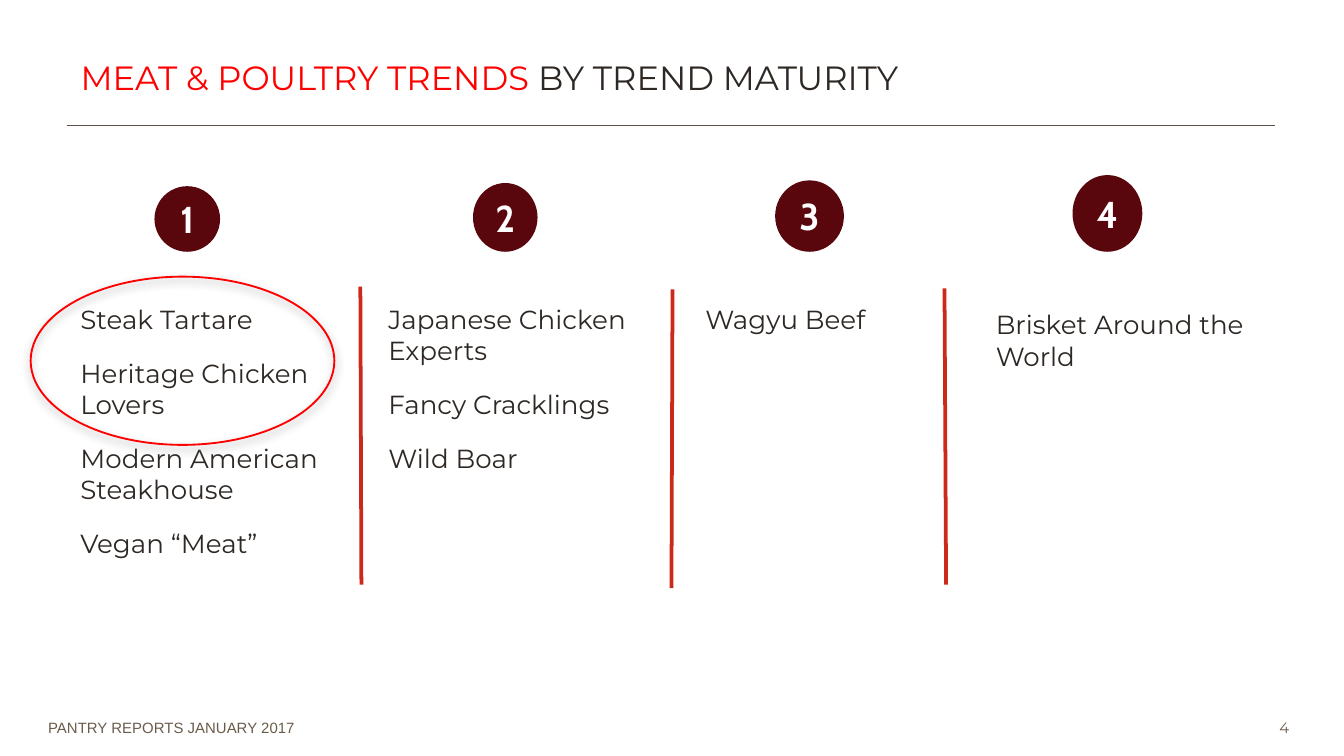
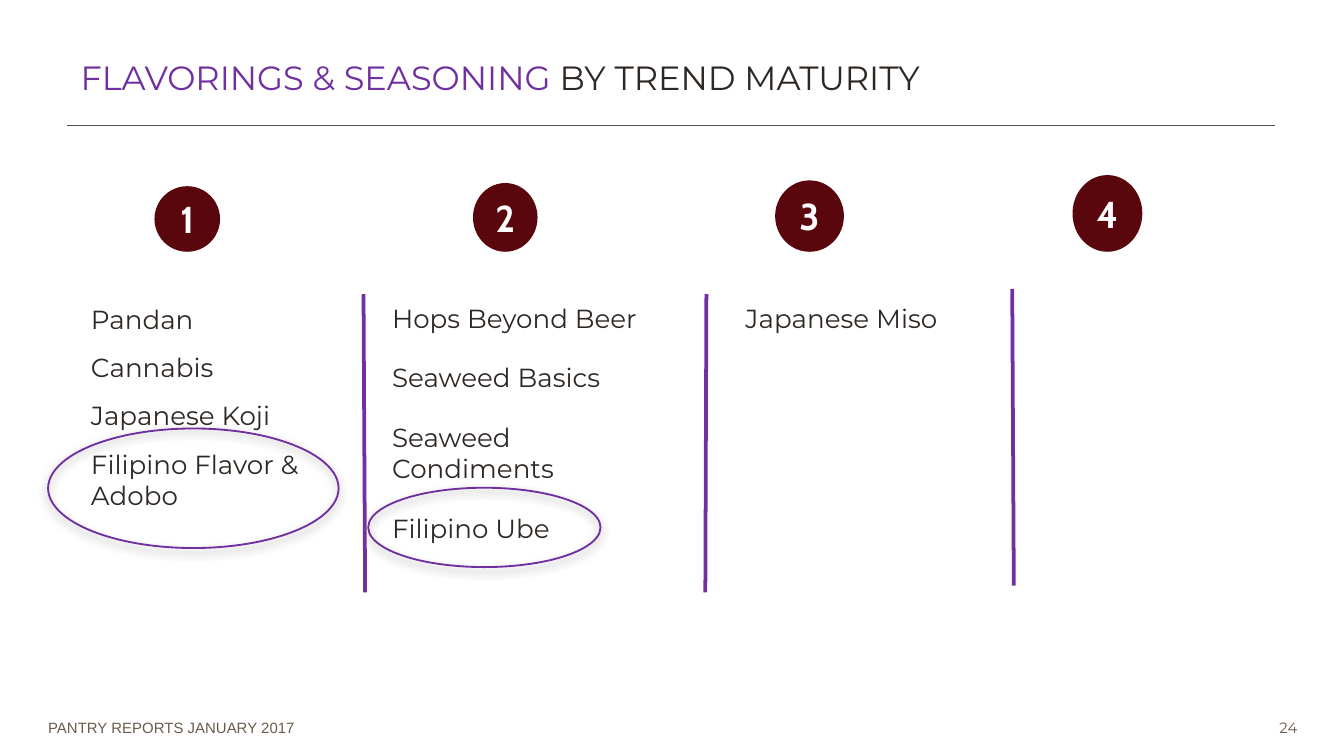
from lxml import etree
from pptx import Presentation
from pptx.dml.color import RGBColor
from pptx.enum import shapes, text
from pptx.oxml.ns import qn
from pptx.util import Cm, Pt

HUES = {
    "ink": "2E2824", "foot": "6A5C4B", "rule": "5C4F47", "badge": "5A060D",
    "white": "FFFFFF", "red": "FF0000", "brick": "CB2A1A",
    "violet": "7030A0", "shade": "808080",
}
BODY = {"name": "Montserrat", "size": Pt(14), "hue": "ink"}
HEAD = {**BODY, "size": Pt(18)}
MARK = {"name": "Cabin", "size": Pt(20), "bold": True, "hue": "white"}
FOOT = {"name": "Arial", "size": Pt(8), "hue": "foot"}
PAGE = {**FOOT, "name": "Montserrat"}

# Badge sizes and centres; all stand on the same base line
BADGES = [(3.54, 1.24, 1.24), (9.55, 1.22, 1.3),
          (15.3, 1.3, 1.35), (20.93, 1.32, 1.45)]

# Boxes are left, top, width, height in cm; bars are x1, y1, x2, y2
MEAT = {
    "title": "MEAT & POULTRY TRENDS ", "page": "4",
    "head": "red", "bar": "brick",
    "lists": [
        ((1.27, 5.61, 5.54, 8.26), 6, 6,
         ["Steak Tartare", "Heritage Chicken Lovers",
          "Modern American Steakhouse", "Vegan “Meat”"]),
        ((7.09, 5.61, 5.77, 4.22), 6, 6,
         ["Japanese Chicken Experts", "Fancy Cracklings", "Wild Boar"]),
        ((13.08, 5.61, 5, 4.52), 0, 6, ["Wagyu Beef"]),
        ((18.57, 5.71, 5.61, 6.17), 0, 6, ["Brisket Around the World"]),
    ],
    "bars": [(6.83, 11.05, 6.81, 5.42), (12.69, 11.12, 12.71, 5.47),
             (17.88, 11.05, 17.85, 5.45)],
    "rings": [(0.58, 5.23, 5.74, 3.18)],
}
SPICE = {
    "title": "FLAVORINGS & SEASONING ", "page": "24",
    "head": "violet", "bar": "violet",
    "lists": [
        ((1.47, 5.61, 5.33, 5.59), 9, 0,
         ["Pandan", "Cannabis", "Japanese Koji", "Filipino Flavor & Adobo"]),
        ((7.16, 5.59, 5.77, 6.27), 9, 6,
         ["Hops Beyond Beer", "Seaweed Basics",
          "Seaweed Condiments", "Filipino Ube"]),
        ((13.84, 5.59, 4.8, 6.17), 9, 6, ["Japanese Miso"]),
    ],
    "bars": [(6.9, 11.2, 6.87, 5.56), (13.33, 11.2, 13.35, 5.56),
             (19.16, 11.07, 19.13, 5.46)],
    "rings": [(0.91, 8.1, 5.49, 2.26), (6.96, 9.22, 4.39, 1.5)],
}


def tint(hue):
    return RGBColor.from_string(HUES[hue])


def span(box):
    return [Cm(side) for side in box]


def style(font, form):
    for key, val in form.items():
        if key == "hue":
            font.color.rgb = tint(val)
        else:
            setattr(font, key, val)


def add_run(para, words, form):
    run = para.add_run()
    run.text = words
    style(run.font, form)


def add_text(slide, box, lines, form, wrap=True, **gaps):
    frame = slide.shapes.add_textbox(*span(box)).text_frame
    frame.word_wrap = wrap
    for num, line in enumerate(lines):
        para = frame.add_paragraph() if num else frame.paragraphs[0]
        for key, val in gaps.items():
            setattr(para, key, val)
        add_run(para, line, form)


def add_line(slide, ends, hue, width):
    line = slide.shapes.add_connector(
        shapes.MSO_CONNECTOR.STRAIGHT, *span(ends))
    line.line.color.rgb = tint(hue)
    line.line.width = Pt(width)
    etree.SubElement(line._element.spPr, qn("a:effectLst"))


def add_oval(slide, box):
    oval = slide.shapes.add_shape(shapes.MSO_SHAPE.OVAL, *span(box))
    oval.shadow.inherit = False
    return oval


def add_title(slide, box, words, hue):
    title = slide.shapes.title
    title.left, title.top, title.width, title.height = span(box)
    frame = title.text_frame
    form = {"word_wrap": True, "auto_size": text.MSO_AUTO_SIZE.NONE,
            "vertical_anchor": text.MSO_ANCHOR.BOTTOM}
    for key, val in form.items():
        setattr(frame, key, val)
    para = frame.paragraphs[0]
    para.alignment = text.PP_ALIGN.LEFT
    add_run(para, words, {**HEAD, "hue": hue})
    add_run(para, "BY TREND MATURITY", HEAD)


def add_foot(slide, box, page):
    left, top, width, height = box
    add_text(slide, (left, top, 22.23, height),
             ["PANTRY REPORTS JANUARY 2017"], FOOT)
    add_text(slide, (left + width - 0.91, top, 0.91, height),
             [page], PAGE, wrap=False)


def add_badges(slide, base):
    for num, (mid, width, height) in enumerate(BADGES, 1):
        oval = add_oval(slide, (mid - width / 2, base - height, width, height))
        oval.fill.solid()
        oval.fill.fore_color.rgb = tint("badge")
        oval.line.fill.background()
        frame = oval.text_frame
        for side in ("left", "top", "right", "bottom"):
            setattr(frame, f"margin_{side}", 0)
        frame.vertical_anchor = text.MSO_ANCHOR.MIDDLE
        para = frame.paragraphs[0]
        para.alignment = text.PP_ALIGN.CENTER
        add_run(para, str(num), MARK)


def add_ring(slide, box, hue):
    ring = add_oval(slide, box)
    ring.fill.background()
    ring.line.color.rgb = tint(hue)
    ring.line.width = Pt(1)
    # Soft shadow below the outline
    glow = etree.SubElement(
        ring._element.spPr.find(qn("a:effectLst")), qn("a:outerShdw"),
        blurRad=str(Pt(5)), dist=str(Pt(2)), dir="5400000", rotWithShape="0")
    shade = etree.SubElement(glow, qn("a:srgbClr"), val=HUES["shade"])
    etree.SubElement(shade, qn("a:alpha"), val="75000")


def add_trend(deck, topic):
    slide = deck.slides.add_slide(deck.slide_layouts.get_by_name("Title Only"))
    # Shared frame
    add_foot(slide, (0.66, 13.46, 24.18, 0.58), topic["page"])
    add_line(slide, (1.27, 2.37, 24.1, 2.37), "rule", 0.75)
    add_title(slide, (1.27, 0.79, 22.86, 1.17), topic["title"], topic["head"])
    add_badges(slide, 4.76)
    # Trends by stage
    for box, before, after, items in topic["lists"]:
        add_text(slide, box, items, BODY,
                 space_before=Pt(before), space_after=Pt(after))
    for ends in topic["bars"]:
        add_line(slide, ends, topic["bar"], 2)
    # Highlights
    for box in topic["rings"]:
        add_ring(slide, box, topic["head"])


def main():
    deck = Presentation()
    deck.slide_width, deck.slide_height = Cm(25.4), Cm(14.29)
    for topic in (MEAT, SPICE):
        add_trend(deck, topic)
    deck.save("out.pptx")


if __name__ == "__main__":
    main()
